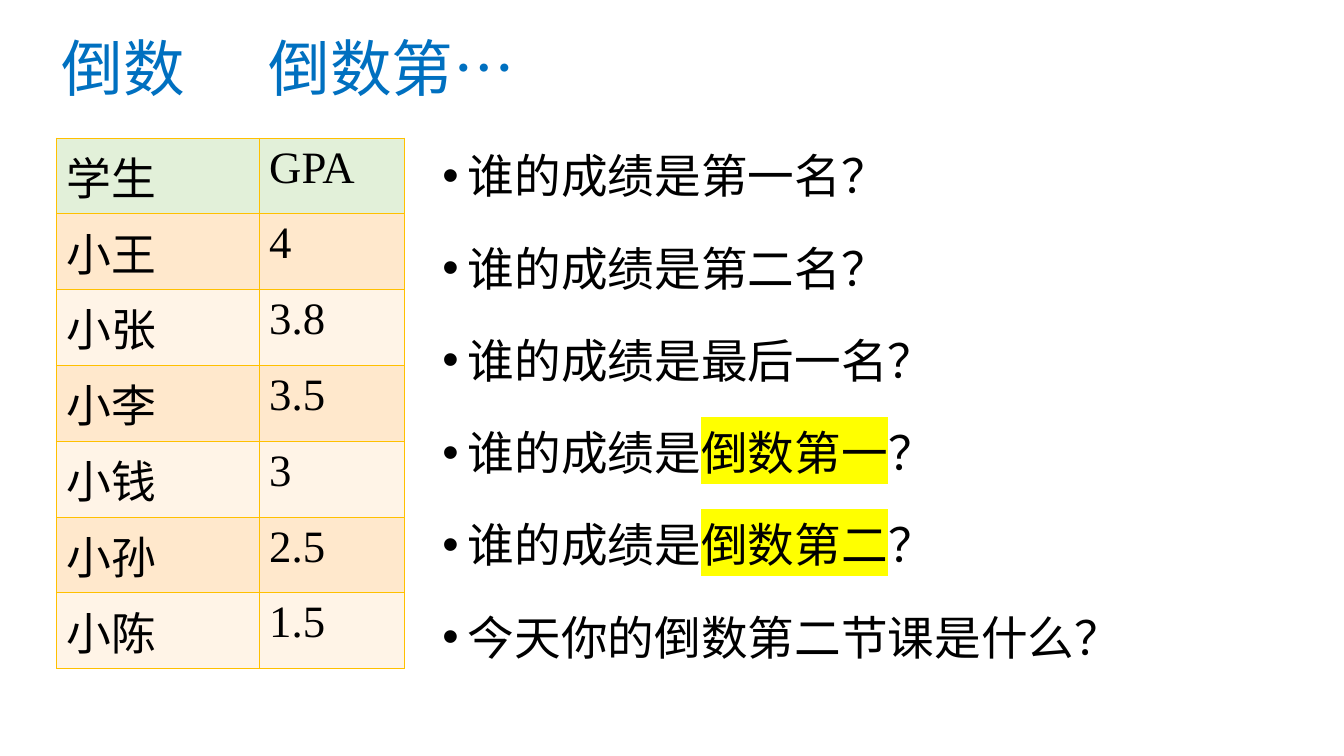
from dataclasses import dataclass

from lxml import etree
from pptx import Presentation
from pptx import util as u
from pptx.dml.color import RGBColor
from pptx.enum import text
from pptx.oxml.ns import qn


@dataclass(frozen=True)
class Theme:
    face: str = "Times New Roman"
    title_size: float = 44
    table_size: float = 32
    question_size: float = 33.3
    title: str = "0070C0"
    ink: str = "000000"
    highlight: str = "FFFF00"
    border: str = "FFC000"
    header: str = "E2F0D9"
    bands: tuple = ("FFE8CC", "FFF4E7")


theme = Theme()


def style(paragraph, size, color):
    paragraph.font.name = theme.face
    paragraph.font.size = u.Pt(size)
    paragraph.font.color.rgb = RGBColor.from_string(color)


def add_color(parent, color):
    etree.SubElement(parent, qn("a:srgbClr"), val=color)


deck = Presentation()
deck.slide_width, deck.slide_height = u.Cm(33.87), u.Cm(19.05)
slide = deck.slides.add_slide(deck.slide_layouts[5])

heading = slide.shapes.title
heading.left, heading.top = u.Cm(1.3), u.Cm(0.58)
heading.width, heading.height = u.Cm(29.21), u.Cm(2.46)
heading.text_frame.text = "倒数\t倒数第…"
heading.text_frame.auto_size = text.MSO_AUTO_SIZE.NONE
heading.text_frame.vertical_anchor = text.MSO_ANCHOR.MIDDLE
topic = heading.text_frame.paragraphs[0]
topic.alignment = text.PP_ALIGN.LEFT
topic.line_spacing = 0.9
tabs = etree.SubElement(topic._p.get_or_add_pPr(), qn("a:tabLst"))
etree.SubElement(tabs, qn("a:tab"), pos=str(u.Cm(5.22)), algn="l")
style(topic, theme.title_size, theme.title)

questions = [
    ("谁的成绩是第一名？",),
    ("谁的成绩是第二名？",),
    ("谁的成绩是最后一名？",),
    ("谁的成绩是", "倒数第一", "？"),
    ("谁的成绩是", "倒数第二", "？"),
    ("今天你的倒数第二节课是什么？",),
]
question_list = slide.shapes.add_textbox(
    u.Cm(10.9), u.Cm(3.02), u.Cm(20.27), u.Cm(14.1)
).text_frame
question_list.word_wrap = True
for index, parts in enumerate(questions):
    question = question_list.add_paragraph() if index else question_list.paragraphs[0]
    question.line_spacing = 1.4
    question.space_before = u.Pt(10)
    indent = question._p.get_or_add_pPr()
    indent.set("marL", str(u.Cm(0.64)))
    indent.set("indent", str(-u.Cm(0.64)))
    etree.SubElement(indent, qn("a:buFont"), typeface="Arial")
    etree.SubElement(indent, qn("a:buChar"), char="•")
    style(question, theme.question_size, theme.ink)
    for position, part in enumerate(parts):
        phrase = question.add_run()
        phrase.text = part
        if position == 1:
            marker = etree.SubElement(phrase._r.get_or_add_rPr(), qn("a:highlight"))
            add_color(marker, theme.highlight)

grades = [
    ("学生", "GPA"),
    ("小王", "4"),
    ("小张", "3.8"),
    ("小李", "3.5"),
    ("小钱", "3"),
    ("小孙", "2.5"),
    ("小陈", "1.5"),
]
row_height = 1.91
grade_table = slide.shapes.add_table(
    len(grades), 2, u.Cm(1.42), u.Cm(3.48), u.Cm(8.77), u.Cm(row_height * len(grades))
).table
grade_table.first_row = False
grade_table.horz_banding = False
for column, width in zip(grade_table.columns, (5.11, 3.66)):
    column.width = u.Cm(width)
for row, entries in enumerate(grades):
    grade_table.rows[row].height = u.Cm(row_height)
    for column, entry in enumerate(entries):
        cell = grade_table.cell(row, column)
        cell.text = entry
        style(cell.text_frame.paragraphs[0], theme.table_size, theme.ink)
        for side in ("a:lnL", "a:lnR", "a:lnT", "a:lnB"):
            edge = etree.SubElement(
                cell._tc.get_or_add_tcPr(), qn(side), w=str(u.Pt(1))
            )
            add_color(etree.SubElement(edge, qn("a:solidFill")), theme.border)
        cell.fill.solid()
        band = theme.bands[(row - 1) % 2] if row else theme.header
        cell.fill.fore_color.rgb = RGBColor.from_string(band)

deck.save("out.pptx")
